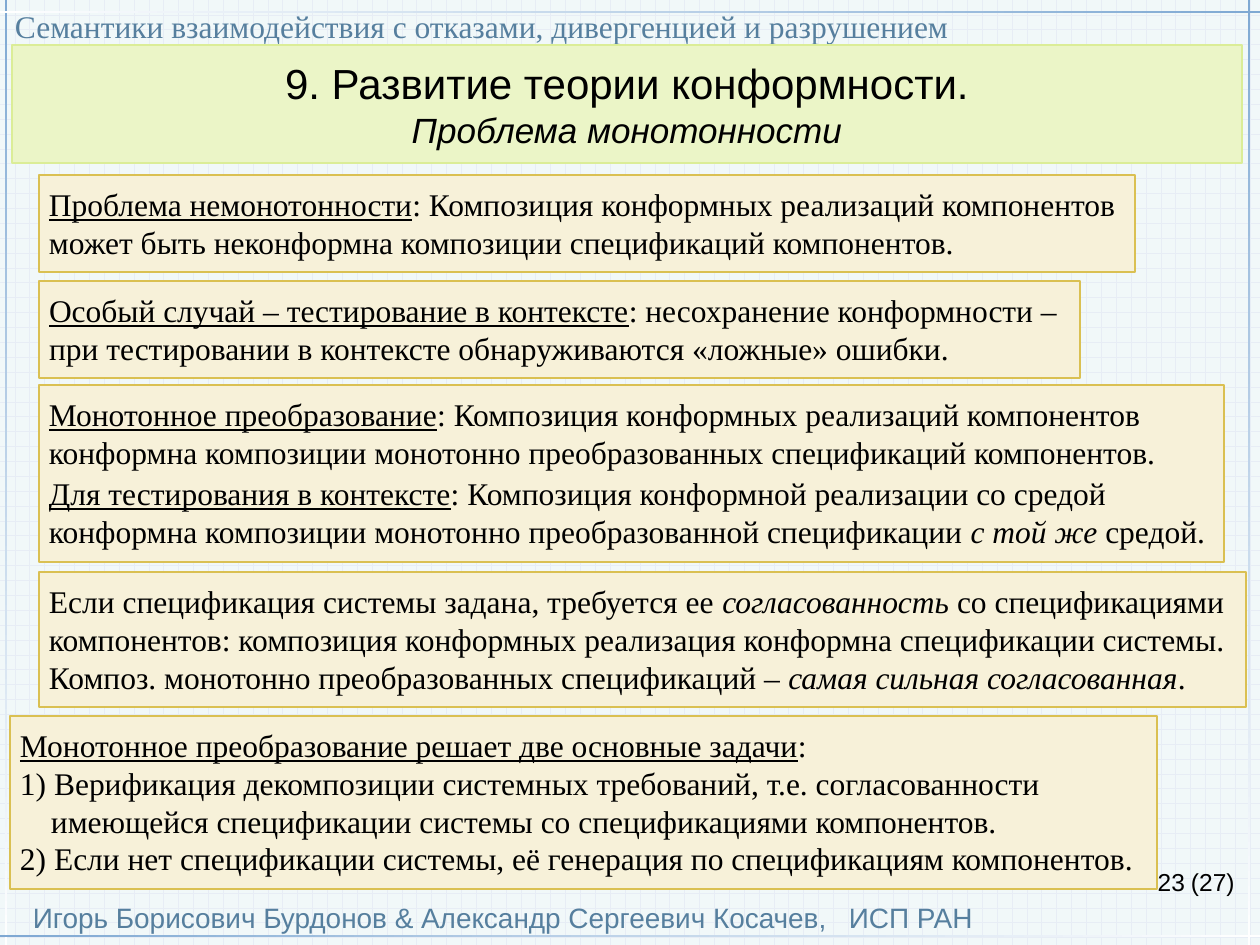
from dataclasses import dataclass

from lxml import etree
from pptx import Presentation
from pptx.dml.color import RGBColor
from pptx.enum.dml import MSO_PATTERN
from pptx.enum.shapes import MSO_SHAPE
from pptx.enum.text import MSO_ANCHOR, PP_ALIGN
from pptx.oxml.ns import qn
from pptx.util import Emu, Pt

RECTANGLE = MSO_SHAPE.RECTANGLE
BRICK = MSO_PATTERN.HORIZONTAL_BRICK
TOP, MIDDLE, BOTTOM = MSO_ANCHOR.TOP, MSO_ANCHOR.MIDDLE, MSO_ANCHOR.BOTTOM
LEFT, CENTER, RIGHT = PP_ALIGN.LEFT, PP_ALIGN.CENTER, PP_ALIGN.RIGHT
EMU_PER_PX = 914400 / 126
WIDTH, HEIGHT = 1260, 945
BAR = 2
BOX_INSET = 10
CONTINUATION_INDENT = 31


@dataclass(frozen=True)
class Theme:
    sans: str = "Arial"
    serif: str = "Times New Roman"
    text: str = "000000"
    muted: str = "567F9E"
    paper: str = "F1F8F9"
    grid: str = "E7EDF5"
    bar: str = "7FA9D3"
    bar_end: str = "FFFFFF"
    title_fill: str = "EBF5C7"
    title_line: str = "DBED97"
    box_fill: str = "F7F1D9"
    box_line: str = "DAC052"
    title_size: int = 24
    subtitle_size: int = 20
    body_size: int = 18
    footer_size: int = 16
    number_size: int = 14


THEME = Theme()

BOXES = [
    ((39, 175, 1096, 97), [
        [("Проблема немонотонности", "underline"),
         (": Композиция конформных реализаций компонентов", "")],
        [("может быть неконформна композиции спецификаций компонентов.", "")],
    ]),
    ((39, 281, 1041, 97), [
        [("Особый случай – тестирование в контексте", "underline"),
         (": несохранение конформности –", "")],
        [("при тестировании в контексте обнаруживаются «ложные» ошибки.", "")],
    ]),
    ((39, 385, 1185, 177), [
        [("Монотонное преобразование", "underline"),
         (": Композиция конформных реализаций компонентов", "")],
        [("конформна композиции монотонно преобразованных спецификаций компонентов.", "")],
        [("Для тестирования в контексте", "underline"),
         (": Композиция конформной реализации со средой", "")],
        [("конформна композиции монотонно преобразованной спецификации ", ""),
         ("с той же", "italic"), (" средой.", "")],
    ]),
    ((10, 716, 1147, 173), [
        [("Монотонное преобразование решает две основные задачи", "underline"), (":", "")],
        [("1) Верификация декомпозиции системных требований, т.е. согласованности", "")],
        [("имеющейся спецификации системы со спецификациями компонентов.", "indent")],
        [("2) Если нет спецификации системы, её генерация по спецификациям компонентов.", "")],
    ]),
    ((39, 572, 1207, 135), [
        [("Если спецификация системы задана, требуется ее ", ""),
         ("согласованность", "italic"), (" со спецификациями", "")],
        [("компонентов: композиция конформных реализация конформна спецификации системы.", "")],
        [("Композ. монотонно преобразованных спецификаций – ", ""),
         ("самая сильная согласованная", "italic"), (".", "")],
    ]),
]


def px(value):
    return Emu(round(value * EMU_PER_PX))


def color(value):
    return RGBColor.from_string(value)


def set_font(paragraph, name, size, value):
    paragraph.font.name = name
    paragraph.font.size = Pt(size)
    paragraph.font.color.rgb = color(value)


def set_frame(shape, inset_x=0, inset_y=0, anchor=TOP, wrap=False):
    frame = shape.text_frame
    frame.margin_left = frame.margin_right = px(inset_x)
    frame.margin_top = frame.margin_bottom = px(inset_y)
    frame.vertical_anchor = anchor
    frame.word_wrap = wrap
    return frame


def add_rectangle(slide, area):
    shape = slide.shapes.add_shape(RECTANGLE, *map(px, area))
    shape.shadow.inherit = False
    return shape


def add_panel(slide, area, fill, line, line_width):
    shape = add_rectangle(slide, area)
    shape.fill.solid()
    shape.fill.fore_color.rgb = color(fill)
    shape.line.color.rgb = color(line)
    shape.line.width = Pt(line_width)
    return shape


def add_bar(slide, area, angle):
    shape = add_rectangle(slide, area)
    shape.line.fill.background()
    shape.fill.gradient()
    shape.fill.gradient_angle = angle
    for stop, value in zip(shape.fill.gradient_stops, (THEME.bar, THEME.bar_end)):
        stop.color.rgb = color(value)


def add_label(slide, area, text, font, size, value, align=LEFT, anchor=TOP, wrap=False, tab=None):
    shape = slide.shapes.add_textbox(*map(px, area))
    paragraph = set_frame(shape, anchor=anchor, wrap=wrap).paragraphs[0]
    paragraph.alignment = align
    if tab:
        properties = paragraph._p.get_or_add_pPr()
        tabs = etree.SubElement(properties, qn("a:tabLst"))
        etree.SubElement(tabs, qn("a:tab"), pos=str(px(tab)), algn="l")
    paragraph.add_run().text = text
    set_font(paragraph, font, size, value)


def add_title(slide):
    shape = add_panel(slide, (12, 45, 1230, 118), THEME.title_fill, THEME.title_line, 0.75)
    paragraph = set_frame(shape, 0, 12, MIDDLE, True).paragraphs[0]
    paragraph.alignment = CENTER
    set_font(paragraph, THEME.sans, THEME.title_size, THEME.text)
    paragraph.add_run().text = "9. Развитие теории конформности."
    paragraph.add_line_break()
    subtitle = paragraph.add_run()
    subtitle.text = "Проблема монотонности"
    subtitle.font.size = Pt(THEME.subtitle_size)
    subtitle.font.italic = True


def add_box(slide, area, lines):
    shape = add_panel(slide, area, THEME.box_fill, THEME.box_line, 1)
    frame = set_frame(shape, BOX_INSET, BOX_INSET)
    for index, parts in enumerate(lines):
        paragraph = frame.paragraphs[0] if index == 0 else frame.add_paragraph()
        paragraph.alignment = LEFT
        set_font(paragraph, THEME.serif, THEME.body_size, THEME.text)
        for text, style in parts:
            run = paragraph.add_run()
            run.text = text
            if style == "underline":
                run.font.underline = True
                if index:
                    paragraph.space_before = Pt(2)
            elif style == "italic":
                run.font.italic = True
            elif style == "indent":
                paragraph._p.get_or_add_pPr().set("marL", str(px(CONTINUATION_INDENT)))


def main():
    presentation = Presentation()
    presentation.slide_width, presentation.slide_height = px(WIDTH), px(HEIGHT)
    slide = presentation.slides.add_slide(presentation.slide_layouts[6])
    background = slide.background.fill
    background.patterned()
    background.pattern = BRICK
    background.fore_color.rgb = color(THEME.grid)
    background.back_color.rgb = color(THEME.paper)

    add_label(slide, (903, 867, 282, 54), "23", THEME.sans, THEME.number_size,
              THEME.text, align=RIGHT, wrap=True)
    for area, angle in [((5, 0, BAR, HEIGHT), 270), ((0, 11, WIDTH, BAR), 180),
                        ((0, 935, WIDTH, BAR), 0), ((1248, 0, BAR, HEIGHT), 270)]:
        add_bar(slide, area, angle)
    add_label(slide, (33, 900, 960, 34),
              "Игорь Борисович Бурдонов & Александр Сергеевич Косачев,\tИСП РАН",
              THEME.sans, THEME.footer_size, THEME.muted, anchor=BOTTOM, wrap=True, tab=816)
    add_label(slide, (15, 7, 1226, 38),
              "Семантики взаимодействия с отказами, дивергенцией и разрушением",
              THEME.serif, THEME.body_size, THEME.muted, wrap=True)
    add_label(slide, (1191, 867, 44, 30), "(27)", THEME.sans, THEME.number_size, THEME.text)
    add_title(slide)
    for area, lines in BOXES:
        add_box(slide, area, lines)
    presentation.save("out.pptx")


if __name__ == "__main__":
    main()
